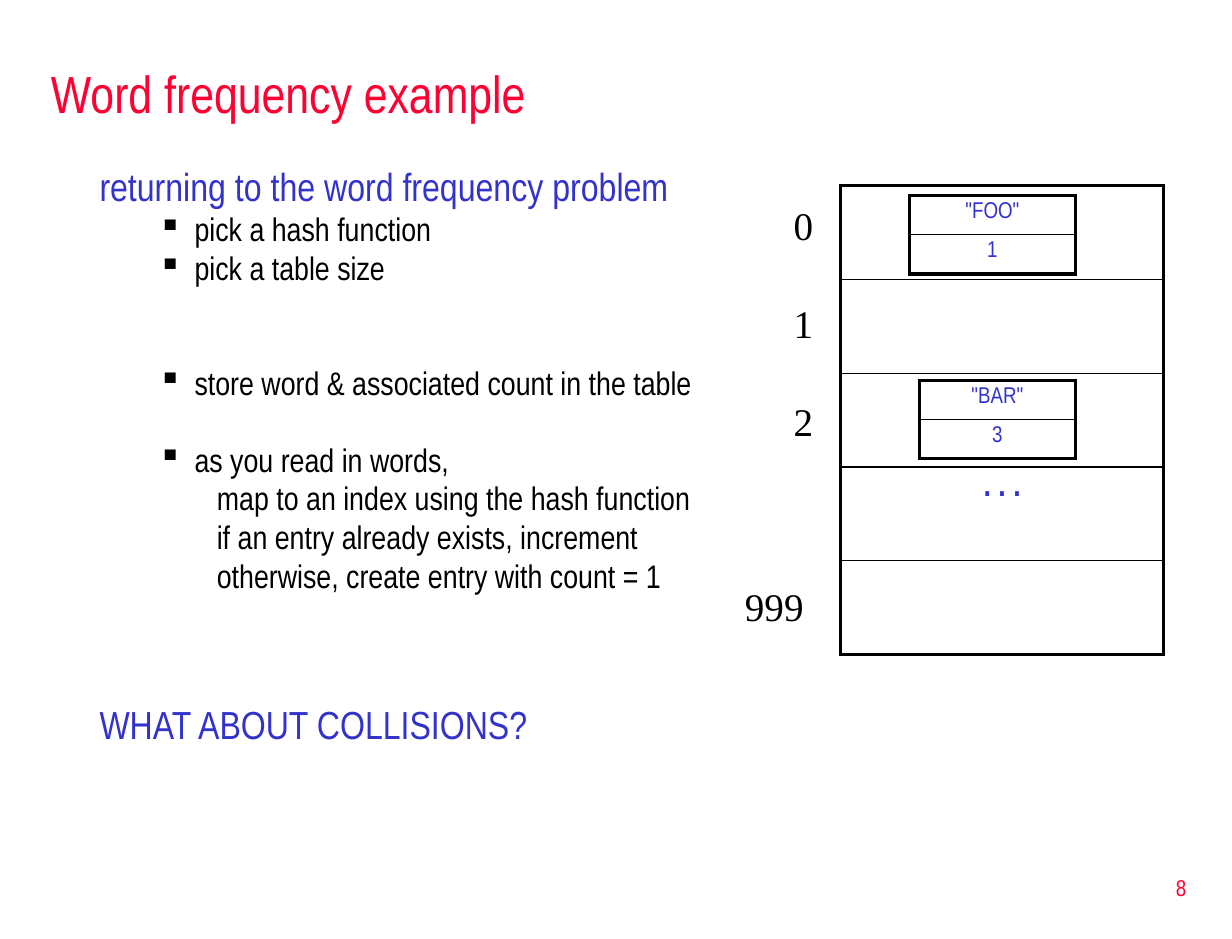
"""Build the word frequency hash table slide on a grid of twelfths of an inch."""
import pptx
import pptx.dml.color
import pptx.enum.text
import pptx.oxml
import pptx.oxml.ns
import pptx.util

Pt = pptx.util.Pt
ALIGN = pptx.enum.text.PP_ALIGN
ANCHOR = pptx.enum.text.MSO_ANCHOR
RED, BLUE, BLACK = "FF0033", "3333CC", "000000"
NARROW, SERIF = "Arial Narrow", "Times New Roman"

prs = pptx.Presentation()
prs.slide_width = pptx.util.Inches(10.5)
prs.slide_height = pptx.util.Inches(8)
U = prs.slide_width // 126
s = prs.slides.add_slide(prs.slide_layouts[5])


def write(p, text, color, para=None, **font):
    """Add one run to a paragraph and apply paragraph and font formats."""
    r = p.add_run()
    r.text = text
    for obj, fmt in ((p, para or {}), (r.font, {"name": NARROW, **font})):
        for key, value in fmt.items():
            setattr(obj, key, value)
    r.font.color.rgb = pptx.dml.color.RGBColor.from_string(color)


def box(x, y, w, h):
    """Add a wrapping text box in grid units and return its text frame."""
    tf = s.shapes.add_textbox(*(int(v * U) for v in (x, y, w, h))).text_frame
    tf.word_wrap = True
    return tf


title = s.shapes.title
for key, value in {"left": 4, "top": 5, "width": 119, "height": 9}.items():
    setattr(title, key, value * U)
title.text_frame.vertical_anchor = ANCHOR.MIDDLE
write(title.text_frame.paragraphs[0], "Word frequency example", RED,
      {"alignment": ALIGN.LEFT}, size=Pt(32))

tf = box(96.2, 87.5, 26.3, 6.4)
tf.vertical_anchor = ANCHOR.MIDDLE
write(tf.paragraphs[0], "8", RED, {"alignment": ALIGN.RIGHT}, size=Pt(14))

body = box(9, 16, 65, 61)
write(body.paragraphs[0], "returning to the word frequency problem", BLUE,
      {"space_before": Pt(4.8)}, size=Pt(24))
GAP, LINE = 4.6, 23.3
for level, skipped, text in (
    (1, 0, "pick a hash function"),
    (1, 0, "pick a table size"),
    (1, 2, "store word & associated count in the table"),
    (1, 1, "as you read in words,"),
    (2, 0, "map to an index using the hash function"),
    (2, 0, "if an entry already exists, increment"),
    (2, 0, "otherwise, create entry with count = 1"),
):
    p = body.add_paragraph()
    write(p, text, BLACK, {"level": level, "line_spacing": 0.8,
                           "space_before": Pt(GAP + skipped * LINE)}, size=Pt(20))
    pPr = p._p.get_or_add_pPr()
    margin, indent = (0.81, -0.31) if level == 1 else (1, 0)
    pPr.set("marL", str(pptx.util.Inches(margin)))
    pPr.set("indent", str(pptx.util.Inches(indent)))
    if level == 1:
        bullet = pptx.oxml.parse_xml(
            f'<a:buChar {pptx.oxml.ns.nsdecls("a")} char="▪"/>')
        pPr.append(bullet)

small = {"size": Pt(14)}
dots = {"size": Pt(20), "bold": True}
for x, y, w, row, texts, font in (
    (93, 20, 17, 4, ['"FOO"', "1"], small),
    (86, 19, 33, 9.58, ["", "", "", ". . .", ""], dots),
    (94, 38.9, 16, 4, ['"BAR"', "3"], small),
):
    n = len(texts)
    table = s.shapes.add_table(
        n, 1, *(int(v * U) for v in (x, y, w, n * row))).table
    table.first_row = table.horz_banding = False
    for i, text in enumerate(texts):
        cell = table.cell(i, 0)
        widths = {"L": 2.25, "R": 2.25, "T": 1 if i else 2.25,
                  "B": 2.25 if i == n - 1 else 1}
        for side, width in widths.items():
            cell._tc.get_or_add_tcPr().append(pptx.oxml.parse_xml(
                f'<a:ln{side} {pptx.oxml.ns.nsdecls("a")} w="{Pt(width)}">'
                f'<a:solidFill><a:srgbClr val="{BLACK}"/></a:solidFill></a:ln{side}>'))
        cell.fill.background()
        if text:
            write(cell.text_frame.paragraphs[0], text, BLUE,
                  {"alignment": ALIGN.CENTER}, **font)

for x, y, w, text in ((80, 20, 5, "0"), (80, 30, 5, "1"),
                      (80, 40, 5, "2"), (75, 59, 10, "999")):
    write(box(x, y, w, 6).paragraphs[0], text, BLACK, name=SERIF, size=Pt(24))

write(box(9, 71, 65, 12).paragraphs[0], "WHAT ABOUT COLLISIONS?", BLUE,
      {"space_before": Pt(4.8)}, size=Pt(24))

prs.save("out.pptx")
